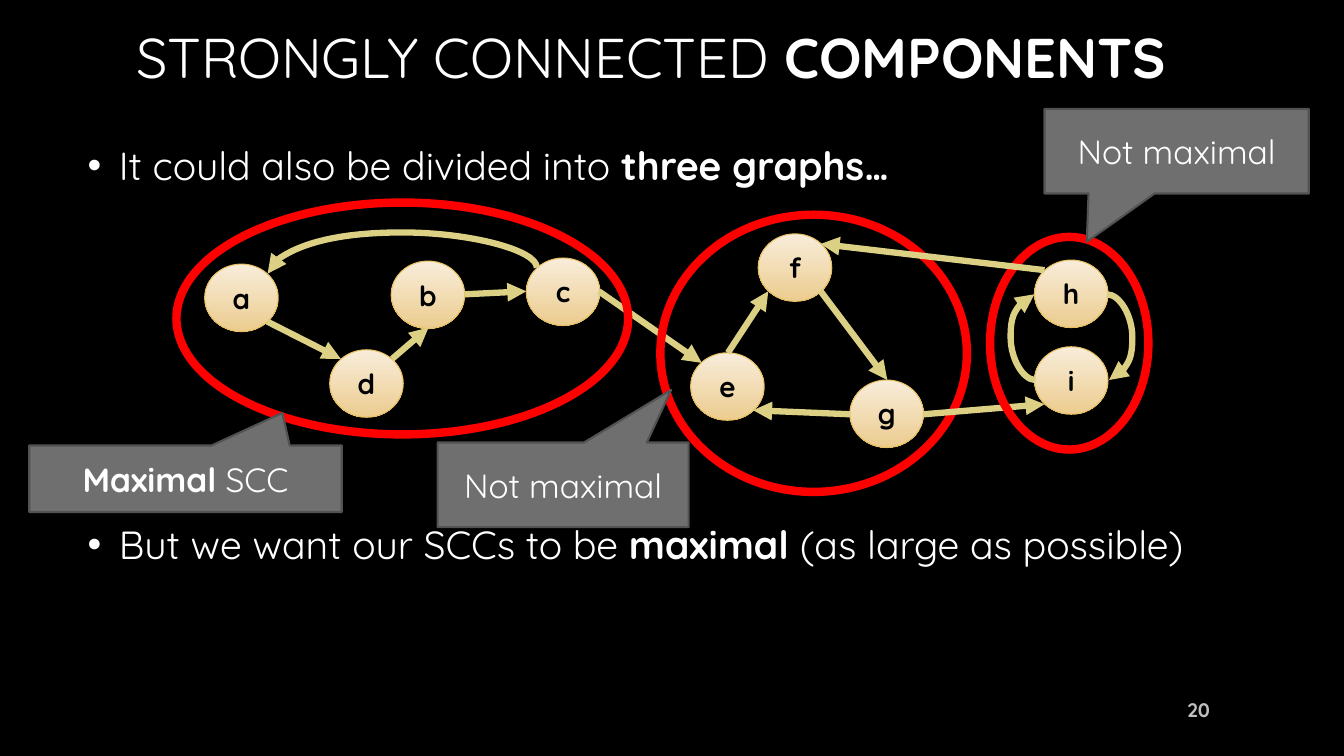
"""Build the strongly connected components slide."""
from lxml import etree
from pptx import Presentation
from pptx.dml.color import RGBColor
from pptx.enum.shapes import MSO_CONNECTOR, MSO_SHAPE
from pptx.enum.text import MSO_ANCHOR, MSO_AUTO_SIZE, PP_ALIGN
from pptx.oxml.ns import qn
from pptx.util import Inches, Pt

STRAIGHT, CURVE = MSO_CONNECTOR.STRAIGHT, MSO_CONNECTOR.CURVE
OVAL, CALLOUT = MSO_SHAPE.OVAL, MSO_SHAPE.RECTANGULAR_CALLOUT
LEFT, CENTER, RIGHT = PP_ALIGN.LEFT, PP_ALIGN.CENTER, PP_ALIGN.RIGHT
MIDDLE, TOP = MSO_ANCHOR.MIDDLE, MSO_ANCHOR.TOP
NO_FIT = MSO_AUTO_SIZE.NONE
FONT = "Quicksand"
NODE_W, NODE_H = 0.73, 0.67
COLORS = {name: RGBColor.from_string(value) for name, value in {
    "black": "000000", "white": "FFFFFF", "number": "BFBFBF",
    "node_top": "F8EDDA", "node_bottom": "ECCC8F", "node_line": "E7BF5F",
    "edge": "DCD084", "region": "FF0000",
    "callout": "6F6F6F", "callout_line": "525252",
}.items()}


def add_runs(p, runs, size, color, align):
    p.alignment = align
    for text, bold in runs:
        r = p.add_run()
        r.text = text
        r.font.name = FONT
        r.font.size = Pt(size)
        r.font.bold = bold
        r.font.color.rgb = COLORS[color]


def add_edge(kind, start, end, bulge=None, rotation=0):
    cn = slide.shapes.add_connector(kind, *map(Inches, start + end))
    cn.line.color.rgb = COLORS["edge"]
    cn.line.width = Pt(4.5)
    sp_pr = cn._element.spPr
    etree.SubElement(sp_pr.find(qn("a:ln")), qn("a:tailEnd"), type="triangle")
    etree.SubElement(sp_pr, qn("a:effectLst"))
    if bulge is not None:
        ratio = round(bulge / abs(end[0] - start[0]) * 100000)
        guides = sp_pr.find(qn("a:prstGeom")).find(qn("a:avLst"))
        etree.SubElement(guides, qn("a:gd"), name="adj1", fmla=f"val {ratio}")
        sp_pr.find(qn("a:xfrm")).set("rot", str(rotation * 60000))


prs = Presentation()
prs.slide_width, prs.slide_height = Inches(13.33), Inches(7.5)
slide = prs.slides.add_slide(prs.slide_layouts[1])
slide.background.fill.solid()
slide.background.fill.fore_color.rgb = COLORS["black"]

title, body = slide.placeholders
for sp, box, anchor in ((title, (1.25, 0, 10.83, 1.12), MIDDLE),
                        (body, (0.77, 1.35, 11.8, 5.03), TOP)):
    sp.left, sp.top, sp.width, sp.height = map(Inches, box)
    sp.text_frame.auto_size = NO_FIT
    sp.text_frame.vertical_anchor = anchor

add_runs(title.text_frame.paragraphs[0],
         [("STRONGLY CONNECTED ", False), ("COMPONENTS", True)], 40, "white", LEFT)

tf = body.text_frame
bullets = [
    (0, [("It could also be divided into ", False), ("three graphs…", True)]),
    (231, [("But we want our SCCs to be ", False), ("maximal ", True),
           ("(as large as possible)", False)]),
]
for i, (before, runs) in enumerate(bullets):
    p = tf.add_paragraph() if i else tf.paragraphs[0]
    add_runs(p, runs, 28, "white", LEFT)
    p.space_before, p.space_after = Pt(before), Pt(6)
    p_pr = p._p.get_or_add_pPr()
    p_pr.set("marL", str(Inches(0.31)))
    p_pr.set("indent", str(Inches(-0.31)))
    etree.SubElement(p_pr, qn("a:buFont"), typeface="Arial")
    etree.SubElement(p_pr, qn("a:buChar"), char="•")

nodes = {
    "a": (2.03, 2.62), "b": (3.88, 2.59), "c": (5.22, 2.56),
    "d": (3.27, 3.47), "e": (6.85, 3.5), "f": (7.52, 2.32),
    "g": (8.43, 3.77), "h": (10.26, 2.58), "i": (10.26, 3.44),
}
for name, (x, y) in nodes.items():
    sp = slide.shapes.add_shape(OVAL, *map(Inches, (x, y, NODE_W, NODE_H)))
    sp.shadow.inherit = False
    sp.fill.gradient()
    sp.fill.gradient_angle = 270
    for stop, color, position in zip(sp.fill.gradient_stops,
                                     ("node_top", "node_bottom"), (0, 1)):
        stop.color.rgb = COLORS[color]
        stop.position = position
    sp.line.color.rgb = COLORS["node_line"]
    sp.line.width = Pt(0.75)
    sp.text_frame.vertical_anchor = MIDDLE
    add_runs(sp.text_frame.paragraphs[0], [(name, True)], 20, "black", CENTER)

layers = [
    ([
        (STRAIGHT, (4.61, 2.92), (5.22, 2.89)),
        (STRAIGHT, (3.89, 3.56), (4.25, 3.25)),
        (STRAIGHT, (2.65, 3.19), (3.38, 3.56)),
        (CURVE, (4.02, 4.02), (3.96, 1.35), -0.35, 270),
        (STRAIGHT, (8.14, 2.89), (8.8, 3.77)),
        (STRAIGHT, (8.43, 4.11), (7.47, 4.07)),
        (STRAIGHT, (7.22, 3.5), (7.62, 2.89)),
        (STRAIGHT, (5.94, 2.89), (6.96, 3.6)),
    ], [(1.75, 2.01, 4.48, 2.3), (6.55, 2.13, 3.04, 2.75)]),
    ([
        (CURVE, (10.98, 2.92), (11, 3.77), 0.25),
        (CURVE, (10.27, 3.77), (10.26, 2.92), 0.25),
        (STRAIGHT, (9.16, 4.11), (10.36, 4.01)),
    ], [(9.82, 2.35, 1.57, 2.11)]),
    ([(STRAIGHT, (10.36, 2.68), (8.14, 2.42))], []),
]
for edges, regions in layers:
    for edge in edges:
        add_edge(*edge)
    for box in regions:
        sp = slide.shapes.add_shape(OVAL, *map(Inches, box))
        sp.shadow.inherit = False
        sp.fill.background()
        sp.line.color.rgb = COLORS["region"]
        sp.line.width = Pt(6)

callouts = [
    ((0.29, 4.42, 3.1, 0.66), (0.31, -0.99), [("Maximal", True), (" SCC", False)]),
    ((4.34, 4.39, 2.49, 0.84), (0.43, -1.12), [("Not maximal", False)]),
    ((10.36, 1.08, 2.62, 0.84), (-0.34, 1.07), [("Not maximal", False)]),
]
for box, tip, runs in callouts:
    sp = slide.shapes.add_shape(CALLOUT, *map(Inches, box))
    sp.shadow.inherit = False
    sp.adjustments[0], sp.adjustments[1] = tip
    sp.fill.solid()
    sp.fill.fore_color.rgb = COLORS["callout"]
    sp.line.color.rgb = COLORS["callout_line"]
    sp.line.width = Pt(1.5)
    sp.text_frame.vertical_anchor = MIDDLE
    add_runs(sp.text_frame.paragraphs[0], runs, 24, "white", CENTER)

number = slide.shapes.add_textbox(*map(Inches, (11.5, 6.84, 0.6, 0.4)))
tf = number.text_frame
tf.word_wrap = True
tf.vertical_anchor = MIDDLE
add_runs(tf.paragraphs[0], [("20", True)], 14, "number", RIGHT)

prs.save("out.pptx")
